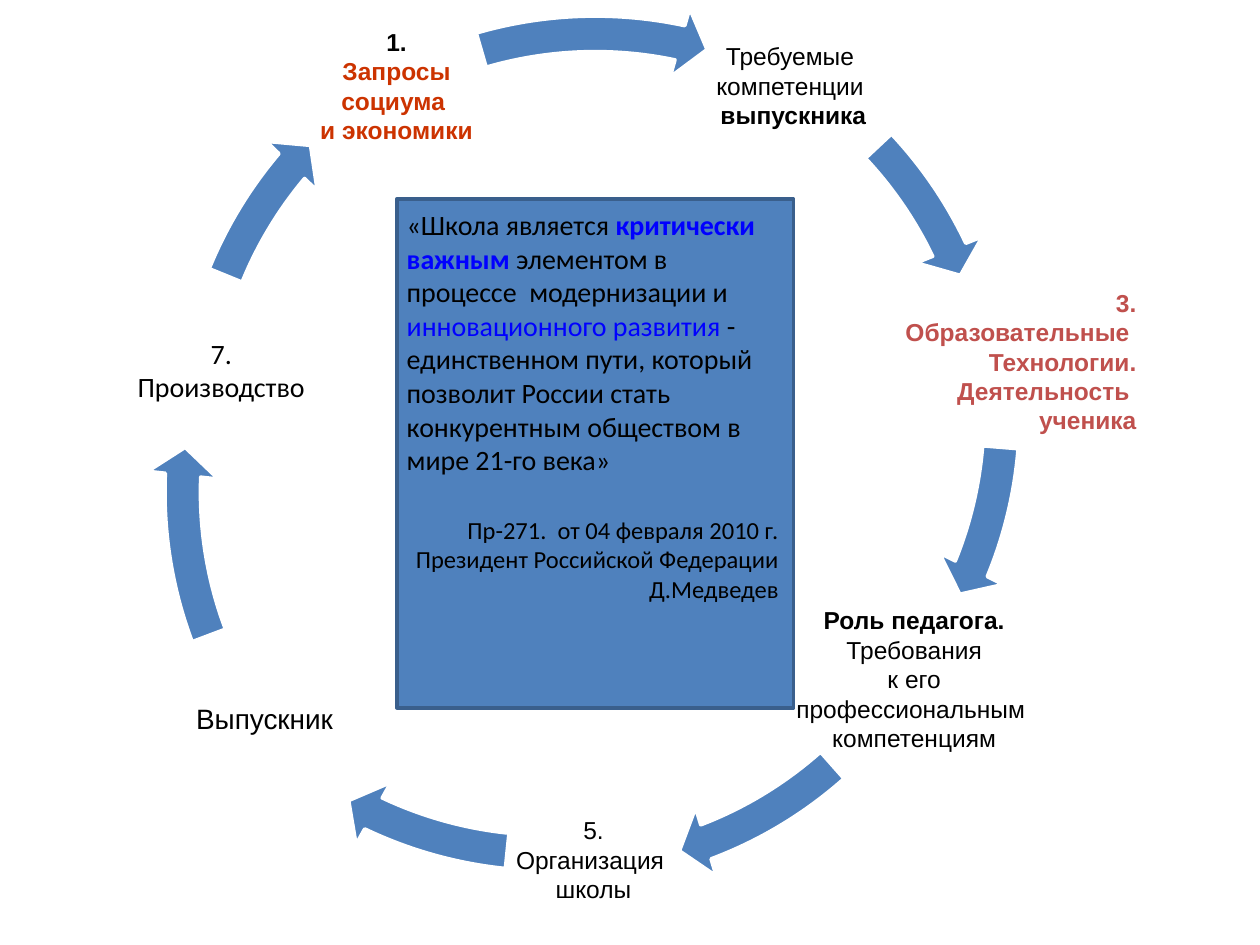
"""Build a slide with a ring of school modernisation stages around a quotation."""
from dataclasses import dataclass

from pptx import Presentation
from pptx.dml.color import RGBColor
from pptx.enum.shapes import MSO_SHAPE
from pptx.enum.text import MSO_ANCHOR, PP_ALIGN
from pptx.util import Cm, Pt


@dataclass(frozen=True)
class Theme:
    blue: str = "4F81BD"
    border: str = "3A5F8C"
    white: str = "FFFFFF"
    black: str = "000000"
    red: str = "C0504D"
    orange: str = "CC3300"
    link: str = "0000FF"
    small: int = 14
    large: int = 16
    outline: int = 2
    label_font: str = "Arial"
    quote_font: str = "Calibri"


theme = Theme()


def add_text_box(left, top, width, height, inset=None):
    box = slide.shapes.add_textbox(Cm(left), Cm(top), Cm(width), Cm(height))
    frame = box.text_frame
    frame.word_wrap = True
    if inset is not None:
        frame.vertical_anchor = MSO_ANCHOR.MIDDLE
        frame.margin_left = frame.margin_right = Cm(inset)
        frame.margin_top = frame.margin_bottom = Cm(inset)
    return frame


def format_runs(para, font, size, color, bold=False):
    for span in para.runs:
        span.font.name = font
        span.font.size = Pt(size)
        span.font.bold = bold
        span.font.color.rgb = RGBColor.from_string(color)


deck = Presentation()
deck.slide_width, deck.slide_height = Cm(25.4), Cm(19.05)
slide = deck.slides.add_slide(deck.slide_layouts[6])

ring_size = 17.86
arrows = [
    (2.79, -0.36, 200.72, 190.09),
    (3.05, -0.58, 13.38, 2.8),
    (2.39, 0.36, 41.55, 29.02),
    (2.13, 0.05, 69.27, 57.5),
    (2.97, 0.99, 109.42, 95.64),
    (3.23, -0.28, 132.11, 121.29),
    (3.07, -0.03, 169.2, 152.26),
]
for left, top, head_angle, tail_angle in arrows:
    arrow = slide.shapes.add_shape(
        MSO_SHAPE.CIRCULAR_ARROW, Cm(left), Cm(top), Cm(ring_size), Cm(ring_size)
    )
    for index, value in enumerate((0.04, 2.35, head_angle, tail_angle, 0.04)):
        arrow.adjustments[index] = value
    arrow.shadow.inherit = False
    arrow.fill.solid()
    arrow.fill.fore_color.rgb = RGBColor.from_string(theme.blue)
    arrow.line.color.rgb = RGBColor.from_string(theme.white)
    arrow.line.width = Pt(theme.outline)

label_height = 3.45
labels = [
    (14.27, 0, 3.45, PP_ALIGN.CENTER, [
        ("Требуемые ", theme.black, False),
        ("компетенции ", theme.black, False),
        ("выпускника", theme.black, True),
    ]),
    (16.97, 5.56, 5.99, PP_ALIGN.RIGHT, [
        (line, theme.red, True)
        for line in ("3.", "Образовательные ", "Технологии.", "Деятельность ", "ученика")
    ]),
    (14.2, 11.96, 8.46, PP_ALIGN.CENTER, [
        ("Роль педагога.", theme.black, True),
        ("Требования", theme.black, False),
        (" к его ", theme.black, False),
        ("профессиональным ", theme.black, False),
        ("компетенциям", theme.black, False),
    ]),
    (10.24, 15.6, 3.45, PP_ALIGN.CENTER, [
        (line, theme.black, False) for line in ("5.", "Организация ", "школы")
    ]),
    (6.27, 0, 3.45, PP_ALIGN.CENTER, [
        ("1.", theme.black, True),
        ("Запросы социума ", theme.orange, True),
        ("и экономики", theme.orange, True),
    ]),
]
for left, top, width, alignment, lines in labels:
    frame = add_text_box(left, top, width, label_height, inset=0.05)
    frame.text = "\n".join(text for text, color, bold in lines)
    for para, (text, color, bold) in zip(frame.paragraphs, lines):
        para.alignment = alignment
        format_runs(para, theme.label_font, theme.small, color, bold)

graduate = add_text_box(3.61, 12.8, 3.45, label_height, inset=0.05)
graduate.text = "Выпускник"
graduate_para = graduate.paragraphs[0]
graduate_para.alignment = PP_ALIGN.CENTER
graduate_para.line_spacing = 0.9
graduate_para.space_after = Pt(6)
format_runs(graduate_para, theme.label_font, theme.large, theme.black)

panel = slide.shapes.add_shape(MSO_SHAPE.RECTANGLE, Cm(8), Cm(4.01), Cm(8), Cm(10.26))
panel.shadow.inherit = False
panel.fill.solid()
panel.fill.fore_color.rgb = RGBColor.from_string(theme.blue)
panel.line.color.rgb = RGBColor.from_string(theme.border)
panel.line.width = Pt(theme.outline)

quote = add_text_box(7.95, 4.06, 8, 10.26)
quote_para = quote.paragraphs[0]
quote_parts = [
    ("«Школа является ", theme.black, False),
    ("критически важным", theme.link, True),
    (" элементом в процессе  модернизации и ", theme.black, False),
    ("инновационного развития", theme.link, False),
    (" - единственном пути, который позволит России стать "
     "конкурентным обществом в мире 21-го века»", theme.black, False),
]
for text, color, bold in quote_parts:
    span = quote_para.add_run()
    span.text = text
    span.font.name = theme.quote_font
    span.font.size = Pt(theme.large)
    span.font.bold = bold
    span.font.color.rgb = RGBColor.from_string(color)

source = quote.add_paragraph()
source.text = "Пр-271.  от 04 февраля 2010 г.\vПрезидент Российской Федерации\vД.Медведев"
source.alignment = PP_ALIGN.RIGHT
source.space_before = Pt(22)
format_runs(source, theme.quote_font, theme.small, theme.black)

production = add_text_box(2.21, 6.65, 4.5, 1.63)
production.text = "7.\nПроизводство"
for para in production.paragraphs:
    para.alignment = PP_ALIGN.CENTER
    format_runs(para, theme.quote_font, theme.large, theme.black)

deck.save("out.pptx")
